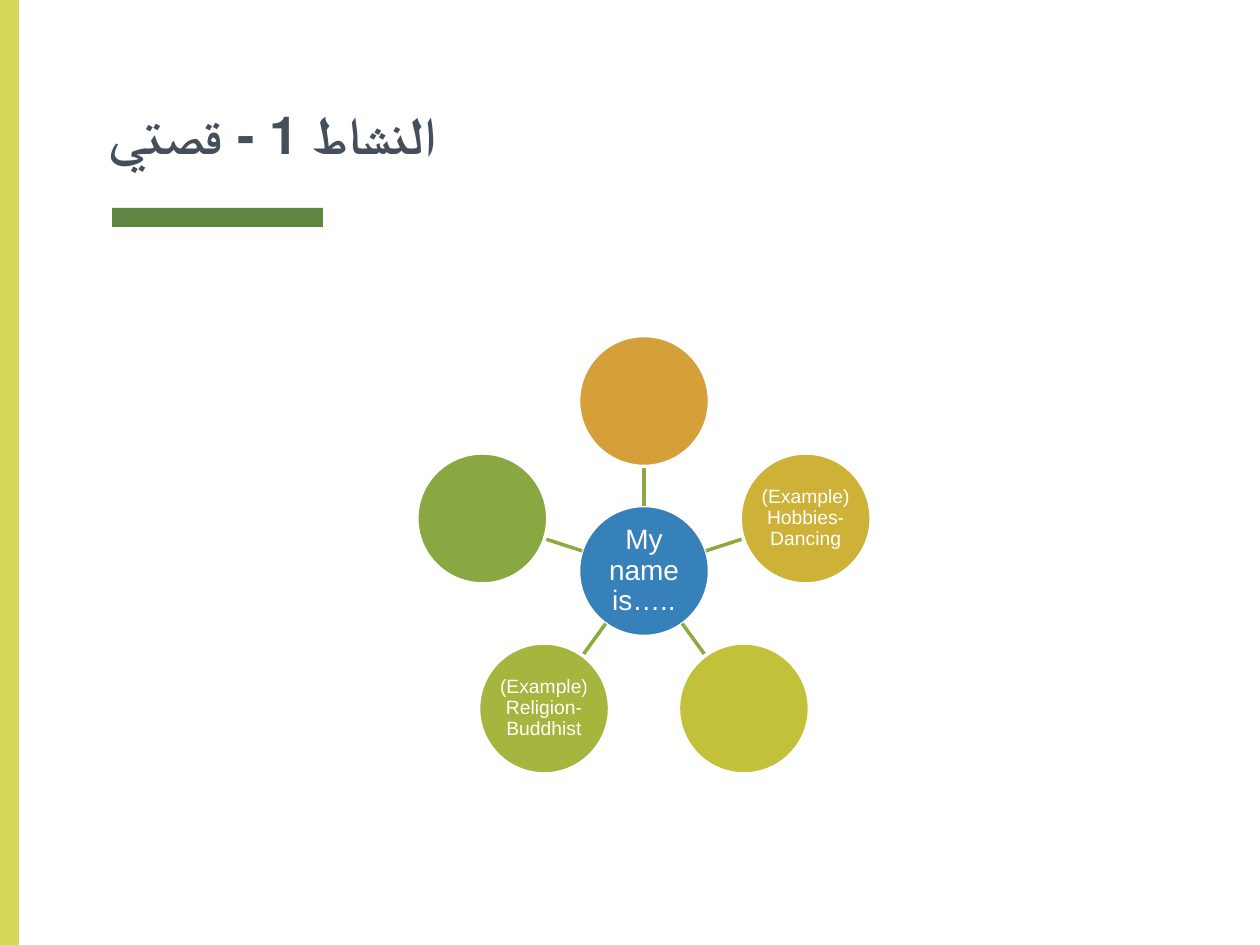
from dataclasses import dataclass
from math import cos, radians, sin

from lxml.etree import SubElement
from pptx import Presentation
from pptx.dml.color import RGBColor
from pptx.enum.shapes import MSO_CONNECTOR, MSO_SHAPE
from pptx.enum.text import MSO_ANCHOR, MSO_AUTO_SIZE, PP_ALIGN
from pptx.oxml.ns import qn
from pptx.util import Pt

PX = 914400 // 126
WHITE = RGBColor(0xFF, 0xFF, 0xFF)
SLATE = RGBColor(0x45, 0x4F, 0x5B)
LIME = RGBColor(0xD5, 0xD8, 0x5A)
GREEN = RGBColor(0x60, 0x86, 0x43)
SPOKE = RGBColor(0x8B, 0xAB, 0x41)
BLUE = RGBColor(0x37, 0x81, 0xBA)
ORANGE = RGBColor(0xD5, 0x9F, 0x39)
GOLD = RGBColor(0xCE, 0xB1, 0x37)
YELLOW = RGBColor(0xC3, 0xC0, 0x39)
OLIVE = RGBColor(0xA5, 0xB5, 0x3E)
LEAF = RGBColor(0x89, 0xA8, 0x42)

CENTER_X, CENTER_Y = 644, 571
ORBIT = 170
DIAMETER = 131
SPOKE_START, SPOKE_END = 65, 105


@dataclass
class Bubble:
    color: RGBColor
    text: str = ""
    size: int = 11


HUB = Bubble(BLUE, "My name is…..", 16)
SATELLITES = [
    Bubble(ORANGE),
    Bubble(GOLD, "(Example) Hobbies- Dancing"),
    Bubble(YELLOW),
    Bubble(OLIVE, "(Example) Religion- Buddhist"),
    Bubble(LEAF),
]


def px(n: float) -> int:
    return round(n * PX)


def polar(radius: int, degrees: float) -> tuple[float, float]:
    """Point around the hub, clockwise from the top."""
    a = radians(degrees)
    return CENTER_X + radius * sin(a), CENTER_Y - radius * cos(a)


def set_insets(tf, inset: int) -> None:
    tf.margin_left = tf.margin_right = tf.margin_top = tf.margin_bottom = px(inset)


def add_bar(s, x: int, y: int, w: int, h: int, color: RGBColor) -> None:
    sp = s.shapes.add_shape(MSO_SHAPE.RECTANGLE, px(x), px(y), px(w), px(h))
    sp.shadow.inherit = False
    sp.fill.solid()
    sp.fill.fore_color.rgb = color
    sp.line.fill.background()


def add_bubble(s, bubble: Bubble, x: float, y: float) -> None:
    sp = s.shapes.add_shape(
        MSO_SHAPE.OVAL, px(x - DIAMETER / 2), px(y - DIAMETER / 2), px(DIAMETER), px(DIAMETER)
    )
    sp.shadow.inherit = False
    sp.fill.solid()
    sp.fill.fore_color.rgb = bubble.color
    sp.line.color.rgb = WHITE
    sp.line.width = Pt(2)
    if not bubble.text:
        return
    tf = sp.text_frame
    tf.word_wrap = True
    tf.vertical_anchor = MSO_ANCHOR.MIDDLE
    set_insets(tf, 1)
    p = tf.paragraphs[0]
    p.text = bubble.text
    p.alignment = PP_ALIGN.CENTER
    p.line_spacing = 0.9
    p.font.name = "Arial"
    p.font.size = Pt(bubble.size)
    p.font.color.rgb = WHITE


def add_spoke(s, degrees: float) -> None:
    ends = [px(n) for r in (SPOKE_START, SPOKE_END) for n in polar(r, degrees)]
    line = s.shapes.add_connector(MSO_CONNECTOR.STRAIGHT, *ends)
    line.line.color.rgb = SPOKE
    line.line.width = Pt(2)
    SubElement(line._element.spPr, qn("a:effectLst"))


def set_title(s, text: str) -> None:
    title = s.shapes.title
    title.left, title.top, title.width, title.height = px(96), 0, px(1070), px(178)
    tf = title.text_frame
    tf.auto_size = MSO_AUTO_SIZE.NONE
    tf.word_wrap = True
    tf.vertical_anchor = MSO_ANCHOR.BOTTOM
    set_insets(tf, 13)
    p = tf.paragraphs[0]
    p.text = text
    p.alignment = PP_ALIGN.LEFT
    font = p.font
    font.name = "Montserrat"
    font.size = Pt(30)
    font.bold = True
    font.color.rgb = SLATE


def main() -> None:
    prs = Presentation()
    prs.slide_width, prs.slide_height = px(1260), px(945)
    s = prs.slides.add_slide(prs.slide_layouts[5])

    add_bar(s, 112, 208, 211, 19, GREEN)
    add_bar(s, 0, 0, 19, 945, LIME)
    set_title(s, "النشاط 1 - قصتي")

    add_bubble(s, HUB, CENTER_X, CENTER_Y)
    for i, bubble in enumerate(SATELLITES):
        degrees = i * 360 / len(SATELLITES)
        add_spoke(s, degrees)
        add_bubble(s, bubble, *polar(ORBIT, degrees))

    prs.save("out.pptx")


if __name__ == "__main__":
    main()
